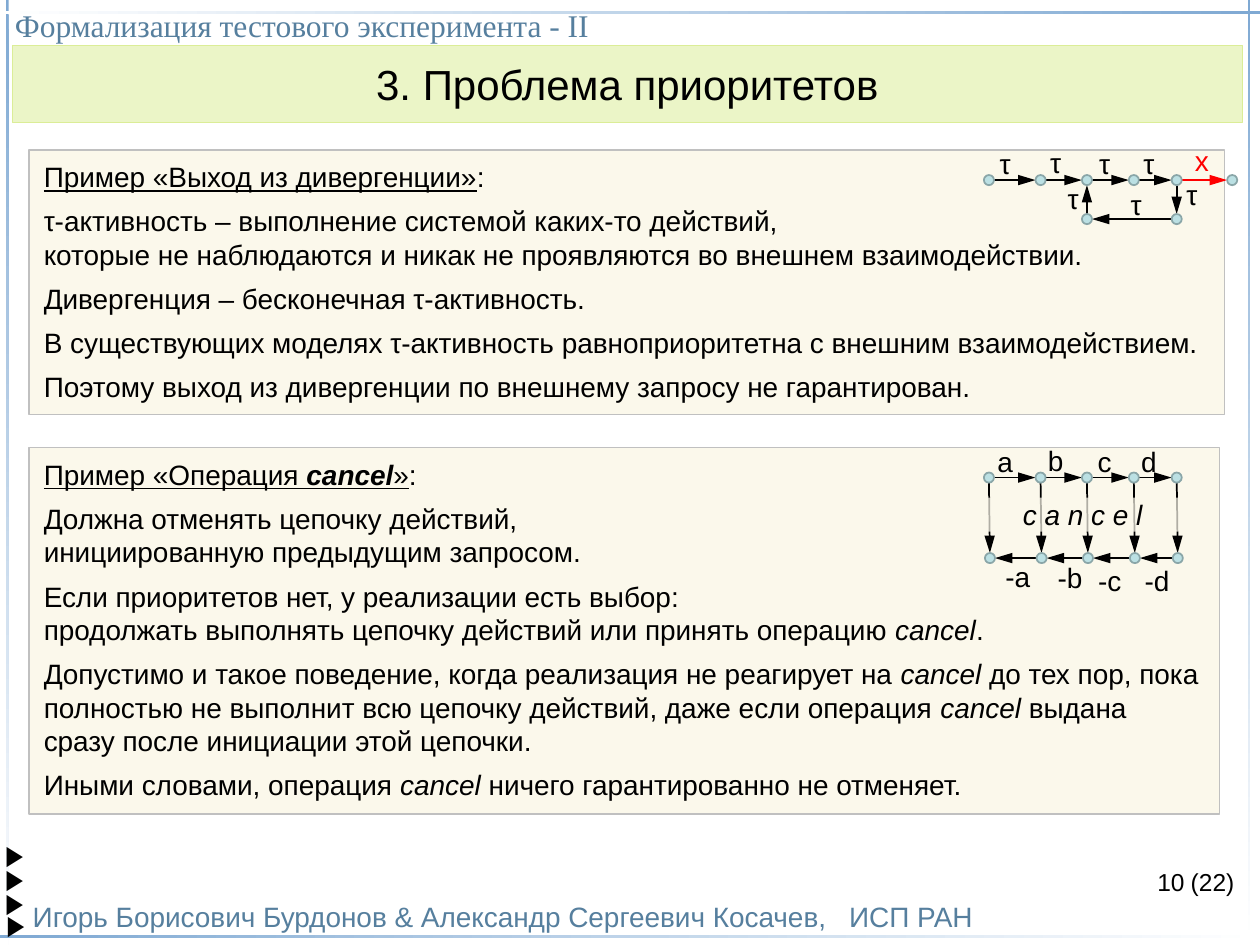
from math import hypot

from lxml import etree
from pptx import Presentation
from pptx.dml.color import RGBColor
from pptx.enum.shapes import MSO_CONNECTOR, MSO_SHAPE
from pptx.enum.text import MSO_ANCHOR, MSO_AUTO_SIZE, PP_ALIGN
from pptx.oxml.ns import qn
from pptx.util import Pt

LINE = MSO_CONNECTOR.STRAIGHT
RECT, OVAL = MSO_SHAPE.RECTANGLE, MSO_SHAPE.OVAL
TOP, MID, BASE = MSO_ANCHOR.TOP, MSO_ANCHOR.MIDDLE, MSO_ANCHOR.BOTTOM
LEFT, MIDST, RIGHT = PP_ALIGN.LEFT, PP_ALIGN.CENTER, PP_ALIGN.RIGHT
FIXED = MSO_AUTO_SIZE.NONE

HUE = {
    "rule": "7FA9D3", "white": "FFFFFF", "black": "000000", "red": "FF0000",
    "head": "567F9E", "title": "EBF5C7", "edge": "DBED97", "panel": "FBF8EB",
    "frame": "C0C0C0", "node": "BBE0E3", "ring": "8AA6A8",
}
BODY = {"name": "Arial", "size": Pt(16)}
SMALL = {"name": "Arial", "size": Pt(14)}
SERIF = {"name": "Times New Roman", "size": Pt(16)}
STYLES = {"": {}, "u": {"underline": True}, "i": {"italic": True},
          "ubi": {"underline": True, "bold": True, "italic": True}}

NODE = 5.8                            # node diameter
COLS = [0, 29.5, 56, 82.8, 107.3]     # node columns of both graphs
MARKS = [(12.2, -16), (41, -16.6), (69, -16), (94.3, -16)]

EXIT = [
    ([("Пример «Выход из дивергенции»", "u"), (":", "")], 6),
    ([("τ-активность – выполнение системой каких-то действий,", "")], 0),
    ([("которые не наблюдаются и никак не проявляются во внешнем "
       "взаимодействии.", "")], 6),
    ([("Дивергенция – бесконечная τ-активность.", "")], 6),
    ([("В существующих моделях τ-активность равноприоритетна с внешним "
       "взаимодействием.", "")], 6),
    ([("Поэтому выход из дивергенции по внешнему запросу не гарантирован.",
       "")], 0),
]
CANCEL = [
    ([("Пример «Операция ", "u"), ("cancel", "ubi"), ("»", "u"), (":", "")], 6),
    ([("Должна отменять цепочку действий,", "")], 0),
    ([("инициированную предыдущим запросом.", "")], 6),
    ([("Если приоритетов нет, у реализации есть выбор:", "")], 0),
    ([("продолжать выполнять цепочку действий или принять операцию ", ""),
      ("cancel", "i"), (".", "")], 6),
    ([("Допустимо и такое поведение, когда реализация не реагирует на ", ""),
      ("cancel", "i"),
      (" до тех пор, пока полностью не выполнит всю цепочку действий, "
       "даже если операция ", ""), ("cancel", "i"),
      (" выдана сразу после инициации этой цепочки.", "")], 6),
    ([("Иными словами, операция ", ""), ("cancel", "i"),
      (" ничего гарантированно не отменяет.", "")], 0),
]


def tint(name):
    return RGBColor.from_string(HUE[name])


def style(font, look, hue="black"):
    for key, val in look.items():
        setattr(font, key, val)
    font.color.rgb = tint(hue)


def set_frame(shape, pad=(0, 0), anchor=TOP, wrap=True):
    frame = shape.text_frame
    form = {"margin_left": Pt(pad[0]), "margin_right": Pt(pad[0]),
            "margin_top": Pt(pad[1]), "margin_bottom": Pt(pad[1]),
            "vertical_anchor": anchor, "word_wrap": wrap, "auto_size": FIXED}
    for key, val in form.items():
        setattr(frame, key, val)
    return frame


def label(slide, text, box, look=BODY, hue="black", align=LEFT, anchor=TOP,
          wrap=True):
    shape = slide.shapes.add_textbox(*map(Pt, box))
    para = set_frame(shape, anchor=anchor, wrap=wrap).paragraphs[0]
    para.text, para.alignment = text, align
    style(para.font, look, hue)
    return para


def block(slide, kind, box, fill, edge=None, width=1):
    shape = slide.shapes.add_shape(kind, *map(Pt, box))
    shape.shadow.inherit = False
    shape.fill.solid()
    shape.fill.fore_color.rgb = tint(fill)
    if edge:
        shape.line.color.rgb, shape.line.width = tint(edge), Pt(width)
    else:
        shape.line.fill.background()
    return shape


def rule(slide, box, angle, hues=("rule", "white")):
    shape = block(slide, RECT, box, "white")
    shape.fill.gradient()
    shape.fill.gradient_angle = angle
    for stop, hue in zip(shape.fill.gradient_stops, hues):
        stop.color.rgb = tint(hue)


def title(slide, text, box):
    shape = slide.shapes.title
    shape.left, shape.top, shape.width, shape.height = map(Pt, box)
    shape.fill.solid()
    shape.fill.fore_color.rgb = tint("title")
    shape.line.color.rgb, shape.line.width = tint("edge"), Pt(0.75)
    para = set_frame(shape, (0, 7.2), MID).paragraphs[0]
    para.text, para.alignment = text, MIDST
    style(para.font, {"name": "Arial", "size": Pt(24)})


def panel(slide, paras, box):
    shape = block(slide, RECT, box, "panel", "frame", 0.75)
    frame = set_frame(shape, (8.5, 5.7))
    for num, (runs, after) in enumerate(paras):
        para = frame.add_paragraph() if num else frame.paragraphs[0]
        para.alignment, para.space_after = LEFT, Pt(after)
        for text, look in runs:
            run = para.add_run()
            run.text = text
            style(run.font, {**BODY, **STYLES[look]})


def link(slide, start, end, hue="black"):
    """Arrow from the rim of one node to the rim of another."""
    (x1, y1), (x2, y2) = start, end
    span = hypot(x2 - x1, y2 - y1)
    dx, dy = (x2 - x1) / span * NODE / 2, (y2 - y1) / span * NODE / 2
    ends = (x1 + dx, y1 + dy, x2 - dx, y2 - dy)
    line = slide.shapes.add_connector(LINE, *map(Pt, ends))
    line.line.color.rgb, line.line.width = tint(hue), Pt(1)
    etree.SubElement(line.line._get_or_add_ln(), qn("a:tailEnd"),
                     type="triangle", w="med", len="lg")
    etree.SubElement(line._element.spPr, qn("a:effectLst"))


def chain(slide, spots):
    for start, end in zip(spots, spots[1:]):
        link(slide, start, end)


def dots(slide, spots):
    for x, y in spots:
        box = (x - NODE / 2, y - NODE / 2, NODE, NODE)
        block(slide, OVAL, box, "node", "ring")


def marks(slide, origin, texts, spots, hue="black"):
    for text, (dx, dy) in zip(texts, spots):
        box = (origin[0] + dx - 9, origin[1] + dy, 18, 19.4)
        label(slide, text, box, hue=hue, align=MIDST)


def row(origin, cols, dx, dy):
    mid = NODE / 2
    return [(origin[0] + col + dx + mid, origin[1] + dy + mid) for col in cols]


def loop_graph(slide, origin):
    top = row(origin, COLS, 0, 0)
    low = row(origin, [COLS[4], COLS[2]], 0, 22.3)
    out = row(origin, [139], 0, 0)
    chain(slide, top + low + [top[2]])
    link(slide, top[4], out[0], "red")
    dots(slide, top + low + out)
    marks(slide, origin, "τ" * 7,
          MARKS + [(118.8, 1.5), (87, 7.3), (51, 3.7)])
    marks(slide, origin, "x", [(124.5, -18)], "red")


def cancel_graph(slide, origin):
    top, low = row(origin, COLS, 0, 0), row(origin, COLS, 0.6, 46)
    chain(slide, top)
    chain(slide, low[::-1])
    for start, end in zip(top, low):
        link(slide, start, end)
    dots(slide, top + low)
    marks(slide, origin, "abcd", MARKS)
    marks(slide, origin, ["-a", "-b", "-c", "-d"],
          [(19.4, 49.7), (49.3, 50.4), (72, 51.8), (99, 51.8)])
    # Translucent band across the vertical arrows
    band = block(slide, RECT, (origin[0], origin[1] + 14.4, 113, 19.4), "panel")
    color = band._element.spPr.find(qn("a:solidFill"))[0]
    etree.SubElement(color, qn("a:alpha"), val="70000")
    para = set_frame(band).paragraphs[0]
    para.text, para.alignment = "c a n c e l", MIDST
    style(para.font, {**BODY, "italic": True})


def border(slide, wide, high):
    rule(slide, (3.4, 0, 1.5, high), 270)
    rule(slide, (0, 6.3, wide, 1.5), 0, ("white", "rule"))
    rule(slide, (0, 534.3, wide, 1.5), 0)
    rule(slide, (713, 0, 1.5, high), 270)


def footer(slide, box):
    x, y, wide, high = box
    para = label(slide, "Игорь Борисович Бурдонов & Александр Сергеевич "
                 "Косачев,\tИСП РАН", (x + 18.7, y + 34, 600, 19.4),
                 hue="head", anchor=BASE)
    tabs = etree.Element(qn("a:tabLst"))
    etree.SubElement(tabs, qn("a:tab"), pos=str(Pt(466.5)), algn="l")
    para._p.get_or_add_pPr().insert(0, tabs)
    label(slide, "10", (x + 577, y + 15.4, 100, 17), SMALL, align=RIGHT)
    label(slide, "(22)", (x + 680.4, y + 15.4, 26, 17), SMALL, wrap=False)
    for dx, dy in [(2.9, -1.2), (2.9, 12.5), (2.9, 26.2), (3.6, 38.4)]:
        label(slide, "▶", (x + dx, y + dy, 9, 19.4), SERIF, wrap=False)


def main():
    deck = Presentation()
    deck.slide_width, deck.slide_height = Pt(720), Pt(540)
    slide = deck.slides.add_slide(deck.slide_layouts[5])
    border(slide, 720, 540)
    label(slide, "Формализация тестового эксперимента - II",
          (8.6, 3.6, 700, 21.6), {**SERIF, "size": Pt(18)}, "head")
    title(slide, "3. Проблема приоритетов", (7, 26, 703, 44))
    panel(slide, EXIT, (16.5, 85.7, 683.3, 151.2))
    loop_graph(slide, (562.2, 100))
    panel(slide, CANCEL, (16.5, 255.6, 680.4, 209.5))
    cancel_graph(slide, (562.2, 270))
    footer(slide, (0, 480, 720, 60))
    deck.save("out.pptx")


if __name__ == "__main__":
    main()
